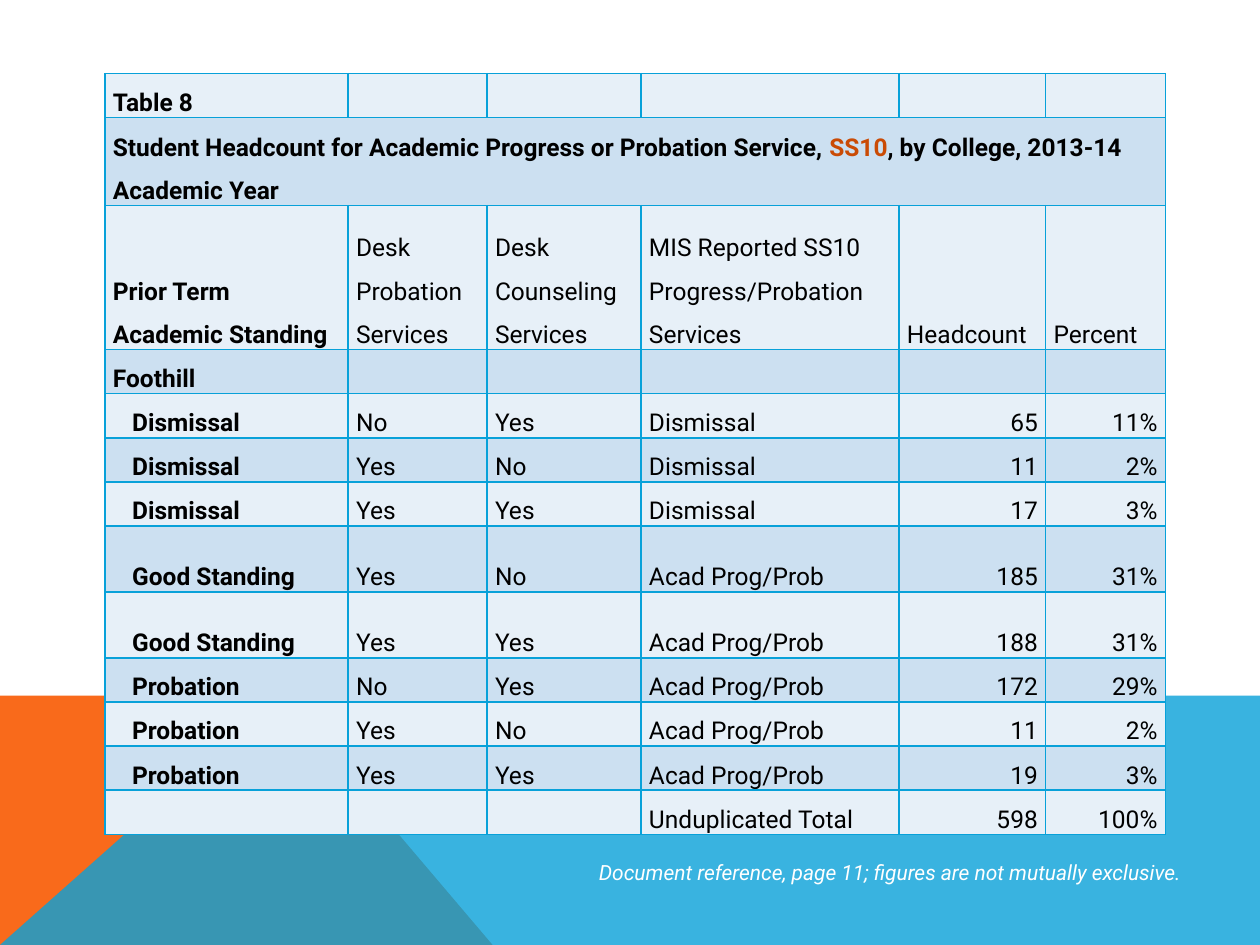
import dataclasses
import typing

import lxml.etree
import pptx
import pptx.dml.color
import pptx.enum.text
import pptx.oxml.ns
import pptx.util

Pt = pptx.util.Pt
RGB = pptx.dml.color.RGBColor
Align = pptx.enum.text.PP_ALIGN


@dataclasses.dataclass(frozen=True)
class Theme:
    font: str = "Roboto"
    table_size: float = 14
    note_size: float = 12
    text: str = "000000"
    highlight: str = "CA4B05"
    note: str = "FFFFFF"
    orange: str = "F96A1B"
    blue: str = "08A1D9"
    bands: tuple[str, str] = ("E7F0F8", "CCE0F1")


@dataclasses.dataclass(frozen=True)
class Panel:
    points: tuple[tuple[float, float], ...]
    color: str
    opacity: int = 100


class TableRow(typing.NamedTuple):
    cells: tuple[str, ...]
    height: float = 25.2
    indent: float = 0


THEME = Theme()
PANELS = (
    Panel(((0, 540), (0, 397.5), (160.5, 397.5), (281.5, 540)), THEME.orange),
    Panel(((0, 540), (160.5, 397.5), (720, 397.5), (720, 540)), THEME.blue, 80),
)
COLUMN_WIDTHS = (139, 79.4, 88, 147.4, 83.8, 68.4)
FIRST_NUMBER_COLUMN = 4
TITLE_ROW = 1
HEADING_ROW = 2
TITLE_RUNS = (
    ("Student Headcount for Academic Progress or Probation Service, ", THEME.text),
    ("SS10", THEME.highlight),
    (", by College, 2013-14 Academic Year", THEME.text),
)


def student_row(*cells: str, height: float = 25.2) -> TableRow:
    return TableRow(cells, height, indent=11)


ROWS = (
    TableRow(("Table 8",)),
    TableRow((), 50.3),
    TableRow(("Prior Term Academic Standing", "Desk Probation Services",
              "Desk Counseling Services",
              "MIS Reported SS10 Progress/Probation Services",
              "Headcount", "Percent"), 82.3),
    TableRow(("Foothill",)),
    student_row("Dismissal", "No", "Yes", "Dismissal", "65", "11%"),
    student_row("Dismissal", "Yes", "No", "Dismissal", "11", "2%"),
    student_row("Dismissal", "Yes", "Yes", "Dismissal", "17", "3%"),
    student_row("Good Standing", "Yes", "No", "Acad Prog/Prob", "185", "31%", height=37.7),
    student_row("Good Standing", "Yes", "Yes", "Acad Prog/Prob", "188", "31%", height=37.7),
    student_row("Probation", "No", "Yes", "Acad Prog/Prob", "172", "29%"),
    student_row("Probation", "Yes", "No", "Acad Prog/Prob", "11", "2%"),
    student_row("Probation", "Yes", "Yes", "Acad Prog/Prob", "19", "3%"),
    TableRow(("", "", "", "Unduplicated Total", "598", "100%")),
)


def add_element(parent, tag: str, **attributes: str):
    return lxml.etree.SubElement(parent, pptx.oxml.ns.qn(tag), attributes)


def draw_panel(slide, panel: Panel) -> None:
    points = [(Pt(x), Pt(y)) for x, y in panel.points]
    builder = slide.shapes.build_freeform(*points[0])
    builder.add_line_segments(points[1:], close=True)
    shape = builder.convert_to_shape()
    shape.shadow.inherit = False
    shape.line.fill.background()
    shape.fill.solid()
    shape.fill.fore_color.rgb = RGB.from_string(panel.color)
    if panel.opacity < 100:
        color = shape._element.spPr.find(".//" + pptx.oxml.ns.qn("a:srgbClr"))
        add_element(color, "a:alpha", val=str(panel.opacity * 1000))


def style_paragraph(paragraph, size: float, color: str, alignment=Align.LEFT,
                    bold: bool = False, italic: bool = False) -> None:
    paragraph.alignment = alignment
    font = paragraph.font
    font.name = THEME.font
    font.size = Pt(size)
    font.bold = bold
    font.italic = italic
    font.color.rgb = RGB.from_string(color)


def style_cell(cell, band: str) -> None:
    """Set borders, fill, insets and bottom anchoring."""
    properties = cell._tc.get_or_add_tcPr()
    for side in ("a:lnL", "a:lnR", "a:lnT", "a:lnB"):
        line = add_element(properties, side, w=str(Pt(1)))
        add_element(add_element(line, "a:solidFill"), "a:srgbClr", val=THEME.blue)
    cell.fill.solid()
    cell.fill.fore_color.rgb = RGB.from_string(band)
    cell.margin_left = cell.margin_right = Pt(4.5)
    cell.margin_top = cell.margin_bottom = 0
    cell.vertical_anchor = pptx.enum.text.MSO_ANCHOR.BOTTOM


def write_cell(cell, runs: typing.Sequence[tuple[str, str]], alignment,
               bold: bool, indent: float = 0) -> None:
    paragraph = cell.text_frame.paragraphs[0]
    paragraph.line_spacing = 1.5
    if indent:
        paragraph._p.get_or_add_pPr().set("marL", str(Pt(indent)))
    style_paragraph(paragraph, THEME.table_size, THEME.text, alignment, bold)
    for text, color in runs:
        run = paragraph.add_run()
        run.text = text
        if color != THEME.text:
            run.font.color.rgb = RGB.from_string(color)


def draw_table(slide) -> None:
    height = sum(row.height for row in ROWS)
    table = slide.shapes.add_table(len(ROWS), len(COLUMN_WIDTHS), Pt(60), Pt(42),
                                   Pt(sum(COLUMN_WIDTHS)), Pt(height)).table
    table.first_row = table.horz_banding = False
    for column, width in zip(table.columns, COLUMN_WIDTHS):
        column.width = Pt(width)
    for row_index, row in enumerate(ROWS):
        table.rows[row_index].height = Pt(row.height)
        for cell in table.rows[row_index].cells:
            style_cell(cell, THEME.bands[row_index % 2])
        for column_index, text in enumerate(row.cells):
            if text:
                is_number = column_index >= FIRST_NUMBER_COLUMN and row_index != HEADING_ROW
                is_label = column_index == 0
                write_cell(table.cell(row_index, column_index), [(text, THEME.text)],
                           Align.RIGHT if is_number else Align.LEFT,
                           bold=is_label, indent=row.indent if is_label else 0)
    title = table.cell(TITLE_ROW, 0)
    title.merge(table.cell(TITLE_ROW, len(COLUMN_WIDTHS) - 1))
    write_cell(title, TITLE_RUNS, Align.LEFT, bold=True)


def draw_note(slide) -> None:
    box = slide.shapes.add_textbox(Pt(300), Pt(487.5), Pt(382.3), Pt(21.8))
    frame = box.text_frame
    frame.word_wrap = True
    frame.auto_size = pptx.enum.text.MSO_AUTO_SIZE.SHAPE_TO_FIT_TEXT
    paragraph = frame.paragraphs[0]
    paragraph.text = "Document reference, page 11; figures are not mutually exclusive."
    style_paragraph(paragraph, THEME.note_size, THEME.note, Align.RIGHT, italic=True)


def main() -> None:
    presentation = pptx.Presentation()
    presentation.slide_width, presentation.slide_height = Pt(720), Pt(540)
    slide = presentation.slides.add_slide(presentation.slide_layouts[6])
    for panel in PANELS:
        draw_panel(slide, panel)
    draw_table(slide)
    draw_note(slide)
    presentation.save("out.pptx")


if __name__ == "__main__":
    main()
